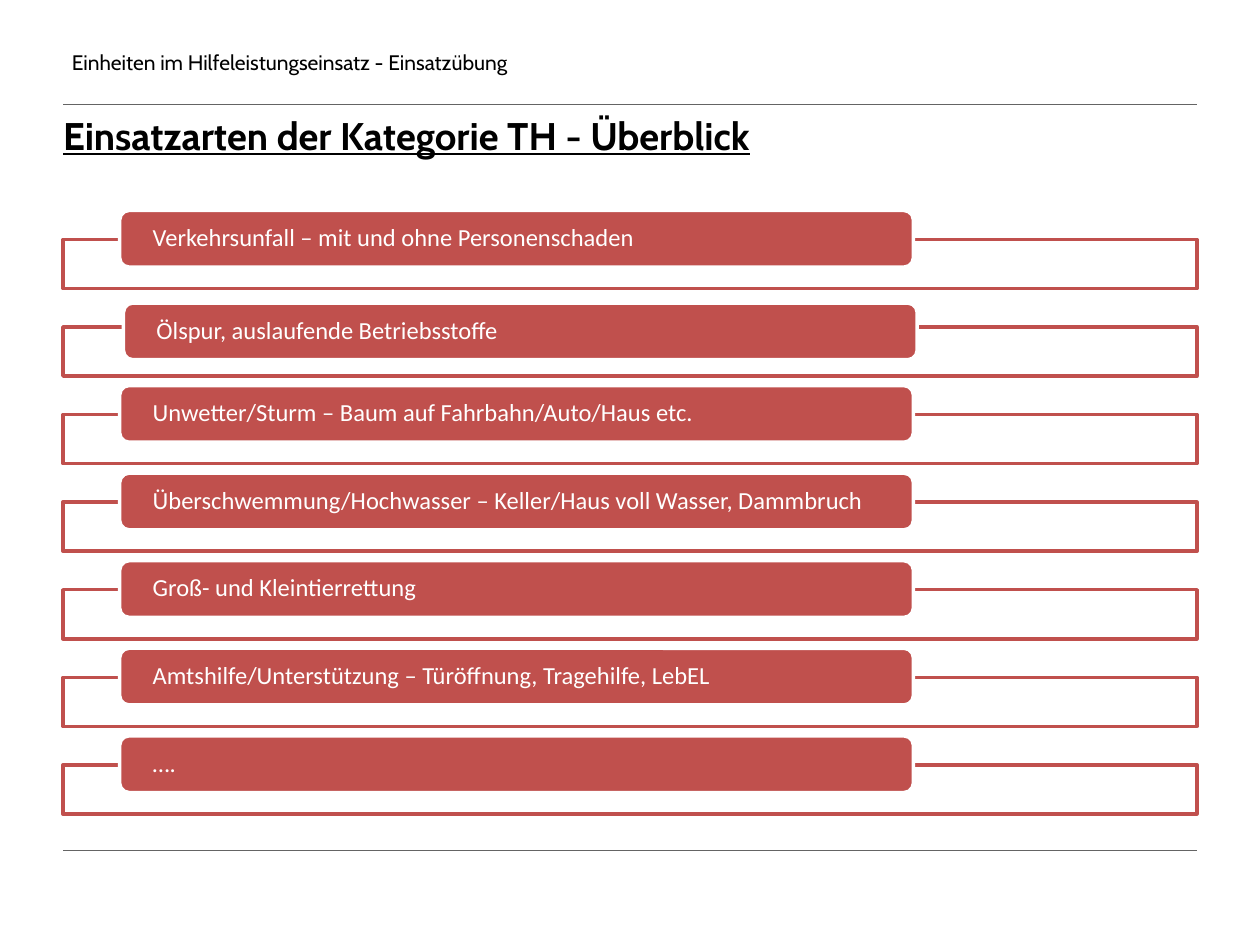
import lxml.etree
import pptx
import pptx.dml.color
import pptx.enum.shapes
import pptx.enum.text
import pptx.oxml.ns
import pptx.util

Inches = pptx.util.Inches
Pt = pptx.util.Pt
qn = pptx.oxml.ns.qn
MSO_SHAPE = pptx.enum.shapes.MSO_SHAPE
ANCHOR = pptx.enum.text.MSO_ANCHOR
ALIGN = pptx.enum.text.PP_ALIGN

COLORS = {"red": "C0504D", "white": "FFFFFF", "black": "000000", "rule": "646464"}
TOPICS = [
    "Verkehrsunfall – mit und ohne Personenschaden",
    "Ölspur, auslaufende Betriebsstoffe",
    "Unwetter/Sturm – Baum auf Fahrbahn/Auto/Haus etc.",
    "Überschwemmung/Hochwasser – Keller/Haus voll Wasser, Dammbruch",
    "Groß- und Kleintierrettung",
    "Amtshilfe/Unterstützung – Türöffnung, Tragehilfe, LebEL",
    "….",
]
SHIFTED = {1: (0.03, 0.04)}


def rgb(name):
    return pptx.dml.color.RGBColor.from_string(COLORS[name])


def set_text(sp, text, font, size, color, anchor, inset=0, bold=None, underline=None):
    tf = sp.text_frame
    tf.word_wrap = True
    tf.auto_size = pptx.enum.text.MSO_AUTO_SIZE.NONE
    tf.vertical_anchor = anchor
    tf.margin_left = tf.margin_right = Inches(inset)
    tf.margin_top = tf.margin_bottom = 0
    p = tf.paragraphs[0]
    p.alignment = ALIGN.LEFT
    r = p.add_run()
    r.text = text
    r.font.name = font
    r.font.size = Pt(size)
    r.font.bold = bold
    r.font.underline = underline
    r.font.color.rgb = rgb(color)
    return p


def add_box(s, kind, x, y, w, h, fill, line):
    sp = s.shapes.add_shape(kind, Inches(x), Inches(y), Inches(w), Inches(h))
    sp.shadow.inherit = False
    sp.fill.solid()
    sp.fill.fore_color.rgb = rgb(fill)
    sp.line.color.rgb = rgb(line)
    sp.line.width = Pt(2)
    return sp


def add_rule(s, x, y, w):
    cx = s.shapes.add_connector(
        pptx.enum.shapes.MSO_CONNECTOR.STRAIGHT,
        Inches(x), Inches(y), Inches(x + w), Inches(y))
    cx.line.color.rgb = rgb("rule")
    cx.line.width = Pt(0.25)
    lxml.etree.SubElement(cx._element.spPr, qn("a:effectLst"))


def add_header(s, x, y, w, h):
    sp = s.shapes.add_textbox(Inches(x), Inches(y), Inches(w), Inches(h))
    set_text(sp, "Einheiten im Hilfeleistungseinsatz - Einsatzübung",
             "Cabin", 12, "black", ANCHOR.MIDDLE, inset=0.07)


def add_title(s, x, y, w, h):
    sp = s.shapes.title
    sp.left, sp.top, sp.width, sp.height = map(Inches, (x, y, w, h))
    p = set_text(sp, "Einsatzarten der Kategorie TH - Überblick",
                 "Cabin", 22, "black", ANCHOR.TOP, bold=True, underline=True)
    p.line_spacing = Pt(24)


def add_topic_list(s, x, y, w, h):
    frame_h, label_h, rise = 0.39, 0.45, 0.23
    pitch = (h - rise - frame_h) / (len(TOPICS) - 1)
    for i, topic in enumerate(TOPICS):
        top = y + i * pitch
        frame = add_box(s, MSO_SHAPE.RECTANGLE, x, top + rise, w, frame_h, "white", "red")
        color = frame.fill._xPr.find(qn("a:solidFill"))[0]
        lxml.etree.SubElement(color, qn("a:alpha"), val="90000")
        dx, dy = SHIFTED.get(i, (0, 0))
        label = add_box(s, MSO_SHAPE.ROUNDED_RECTANGLE, x + 0.45 + dx, top + dy,
                        0.7 * w, label_h, "red", "white")
        p = set_text(label, topic, "Calibri", 14, "white", ANCHOR.MIDDLE, inset=0.24)
        p.line_spacing = 0.9


def main():
    prs = pptx.Presentation()
    prs.slide_width, prs.slide_height = Inches(10), Inches(7.5)
    s = prs.slides.add_slide(prs.slide_layouts[5])
    add_header(s, 0.5, 0.33, 6.08, 0.33)
    add_rule(s, 0.5, 0.83, 9)
    add_title(s, 0.5, 0.92, 7.17, 0.94)
    add_topic_list(s, 0.5, 1.67, 9, 4.79)
    add_rule(s, 0.5, 6.75, 9)
    prs.save("out.pptx")


if __name__ == "__main__":
    main()
